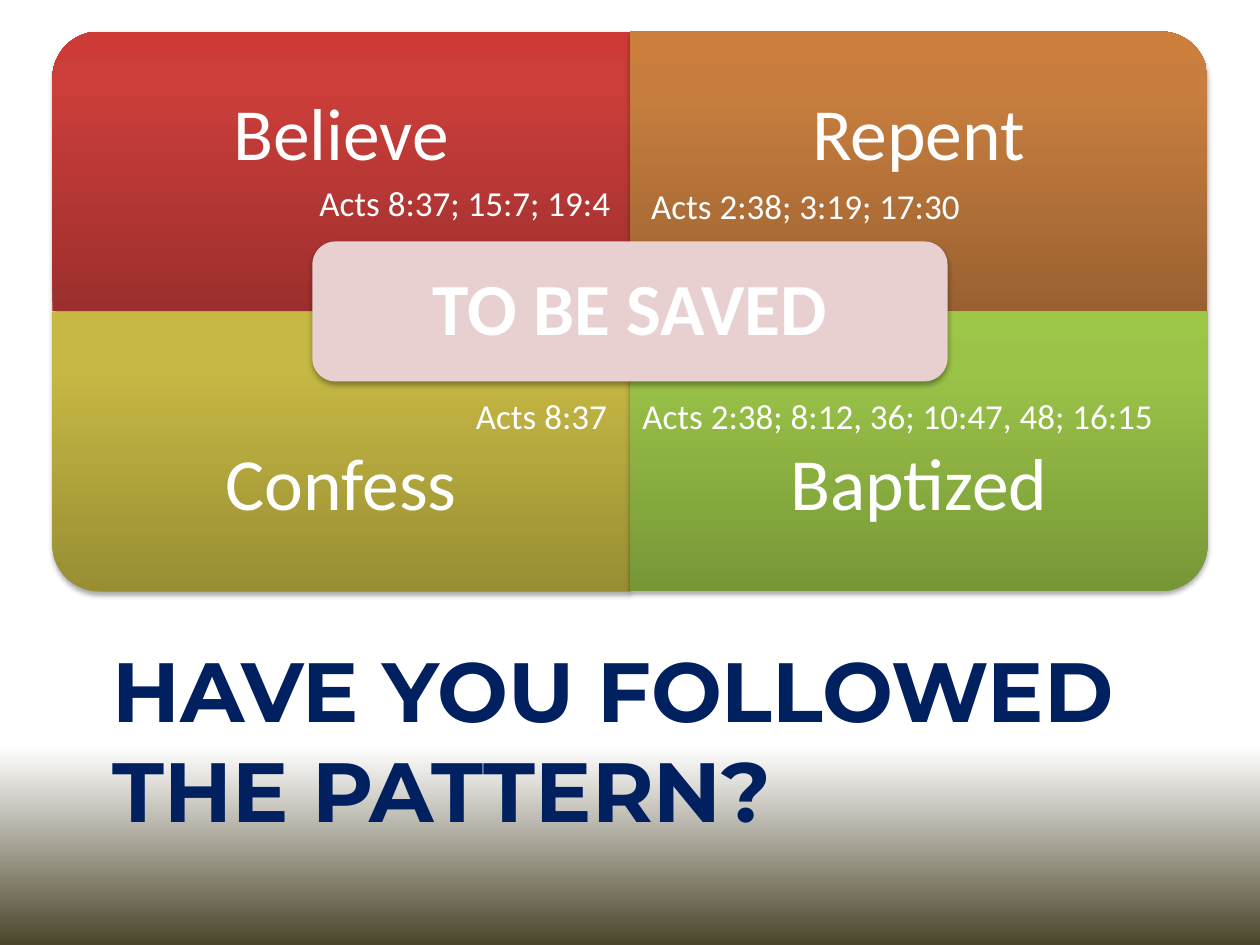
from lxml import etree
from pptx import Presentation
from pptx.dml.color import RGBColor
from pptx.enum import shapes, text
from pptx.oxml import parse_xml
from pptx.oxml.ns import nsdecls, qn
from pptx.util import Pt

TITLE = "HAVE YOU FOLLOWED THE PATTERN?"
CENTER = "TO BE SAVED"
BACK = [(0, "FFFFFF"), (79, "FFFFFF"), (100, "4A452A")]
# label, column, row, turn, colours from bottom to top
STEPS = [
    ("Believe", 0, 0, 270, ("9C2F2D", "CB3E3A", "CE3B37")),
    ("Repent", 1, 0, 0, ("9A6130", "C87E3F", "CC7E3C")),
    ("Confess", 0, 1, 180, ("988E34", "C6B843", "C9BB41")),
    ("Baptized", 1, 1, 90, ("779737", "9BC348", "9DC746")),
]
# verse, left, top, width, alignment
VERSES = [
    ("Acts 8:37; 15:7; 19:4", 174, 100, 182, "RIGHT"),
    ("Acts 2:38; 3:19; 17:30", 365, 102, 193, "LEFT"),
    ("Acts 8:37", 264, 222, 90, "RIGHT"),
    ("Acts 2:38; 8:12, 36; 10:47, 48; 16:15", 360, 222, 309, "LEFT"),
]
LEFT, TOP, WIDE, HIGH = 30, 18, 330, 160
LABEL = 120
MID_W, MID_H, RIM = 363, 80, 4


def color(code):
    return RGBColor.from_string(code)


def grade(owner, fill, stops, angle):
    """Fill with a linear gradient that stays upright when the shape turns."""
    fill.gradient()
    old = owner.find(".//" + qn("a:gradFill"))
    marks = "".join(
        f'<a:gs pos="{pos * 1000}"><a:srgbClr val="{code}"/></a:gs>'
        for pos, code in stops)
    new = parse_xml(
        f'<a:gradFill {nsdecls("a")} rotWithShape="0"><a:gsLst>{marks}</a:gsLst>'
        f'<a:lin ang="{angle * 60000}" scaled="0"/></a:gradFill>')
    old.getparent().replace(old, new)


def shade(shape):
    """Drop a soft shadow straight down and hide the outline."""
    shape.line.fill.background()
    shape.shadow.inherit = False
    shape.element.spPr.find(qn("a:effectLst")).append(parse_xml(
        f'<a:outerShdw {nsdecls("a")} blurRad="{Pt(3.1)}" dist="{Pt(1.8)}" '
        'dir="5400000" rotWithShape="0"><a:srgbClr val="000000">'
        '<a:alpha val="35000"/></a:srgbClr></a:outerShdw>'))


def write(shape, words, size=42, font="Calibri", ink="FFFFFF", bold=False,
          align="CENTER", anchor="MIDDLE", inset=None, wrap=True, space=None):
    frame = shape.text_frame
    frame.auto_size = (text.MSO_AUTO_SIZE.NONE if wrap
                       else text.MSO_AUTO_SIZE.SHAPE_TO_FIT_TEXT)
    frame.word_wrap = wrap
    frame.vertical_anchor = text.MSO_ANCHOR[anchor]
    if inset is not None:
        frame.margin_left = frame.margin_right = Pt(inset)
        frame.margin_top = frame.margin_bottom = Pt(inset)
    para = frame.paragraphs[0]
    para.alignment = text.PP_ALIGN[align]
    if space:
        para.line_spacing = space
    run = para.add_run()
    run.text = words
    run.font.size, run.font.name, run.font.bold = Pt(size), font, bold
    run.font.color.rgb = color(ink)
    return run


def place(shape, x, y, w, h):
    shape.left, shape.top = Pt(x), Pt(y)
    shape.width, shape.height = Pt(w), Pt(h)


def box(x, y, w, h):
    return Pt(x), Pt(y), Pt(w), Pt(h)


deck = Presentation()
deck.slide_width, deck.slide_height = Pt(720), Pt(540)
slide = deck.slides.add_slide(deck.slide_layouts[5])
grade(slide.element, slide.background.fill, BACK, 90)

title = slide.shapes.title
place(title, 57, 361, 612, 107)
run = write(title, TITLE, size=48, font="Montserrat", ink="002060", bold=True,
            align="LEFT", anchor="TOP")
edge = etree.Element(qn("a:ln"), w=str(Pt(0.75)))
paint = etree.SubElement(edge, qn("a:solidFill"))
etree.SubElement(paint, qn("a:srgbClr"), val="FFFFFF")
run.font._element.insert(0, edge)

group = slide.shapes.add_group_shape().shapes
for label, col, row, turn, tones in STEPS:
    x, y = LEFT + col * WIDE, TOP + row * HIGH
    w, h = (HIGH, WIDE) if turn % 180 else (WIDE, HIGH)
    panel = group.add_shape(
        shapes.MSO_SHAPE.ROUND_1_RECTANGLE,
        *box(x + (WIDE - w) / 2, y + (HIGH - h) / 2, w, h))
    panel.rotation = turn
    grade(panel.element, panel.fill, zip((0, 80, 100), tones), 270)
    shade(panel)
    y += row * (HIGH - LABEL)
    write(group.add_textbox(*box(x, y, WIDE, LABEL)), label, inset=24, space=0.9)

x, y = LEFT + WIDE - MID_W / 2, TOP + HIGH - MID_H / 2
badge = group.add_shape(shapes.MSO_SHAPE.ROUNDED_RECTANGLE, *box(x, y, MID_W, MID_H))
badge.fill.solid()
badge.fill.fore_color.rgb = color("E8D0D0")
shade(badge)
inner = group.add_textbox(*box(x + RIM, y + RIM, MID_W - 2 * RIM, MID_H - 2 * RIM))
write(inner, CENTER, bold=True, inset=12, space=0.9)

for verse, x, y, w, align in VERSES:
    write(slide.shapes.add_textbox(*box(x, y, w, 32)), verse, size=20,
          align=align, anchor="TOP", wrap=False)

deck.save("out.pptx")
